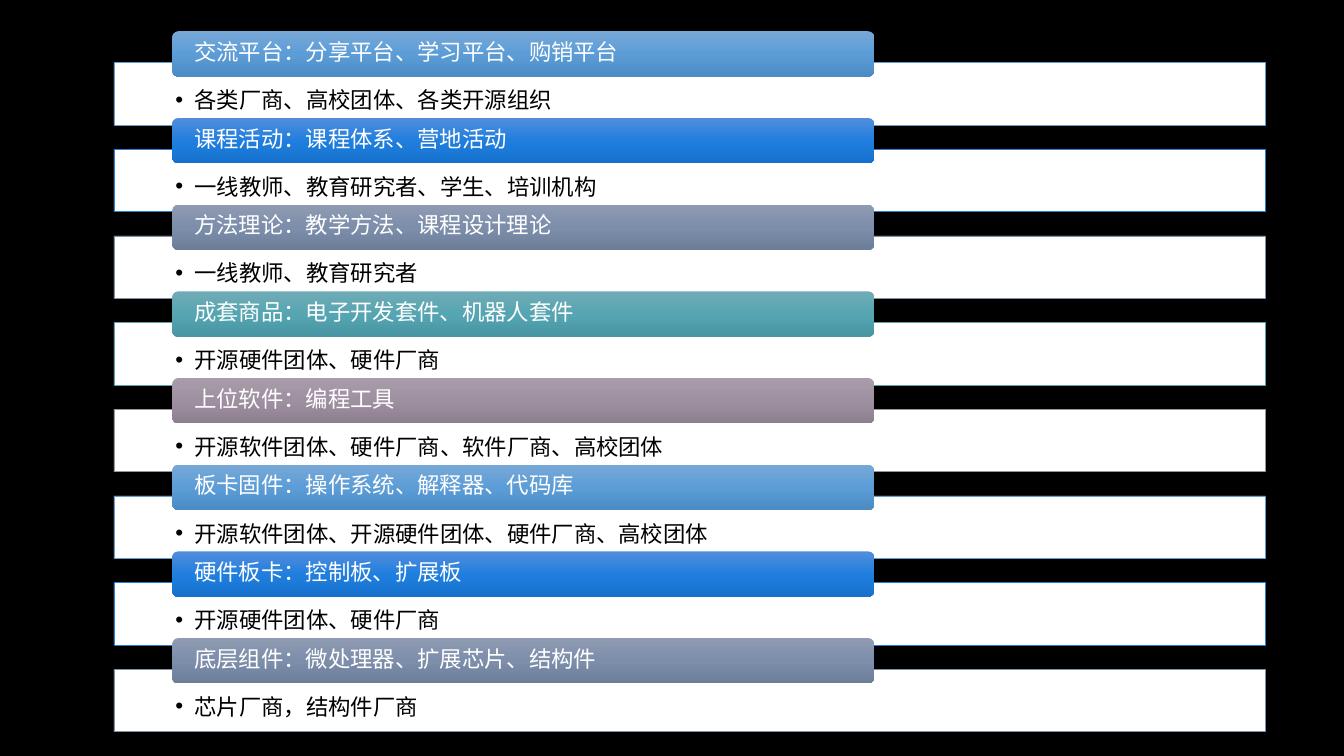
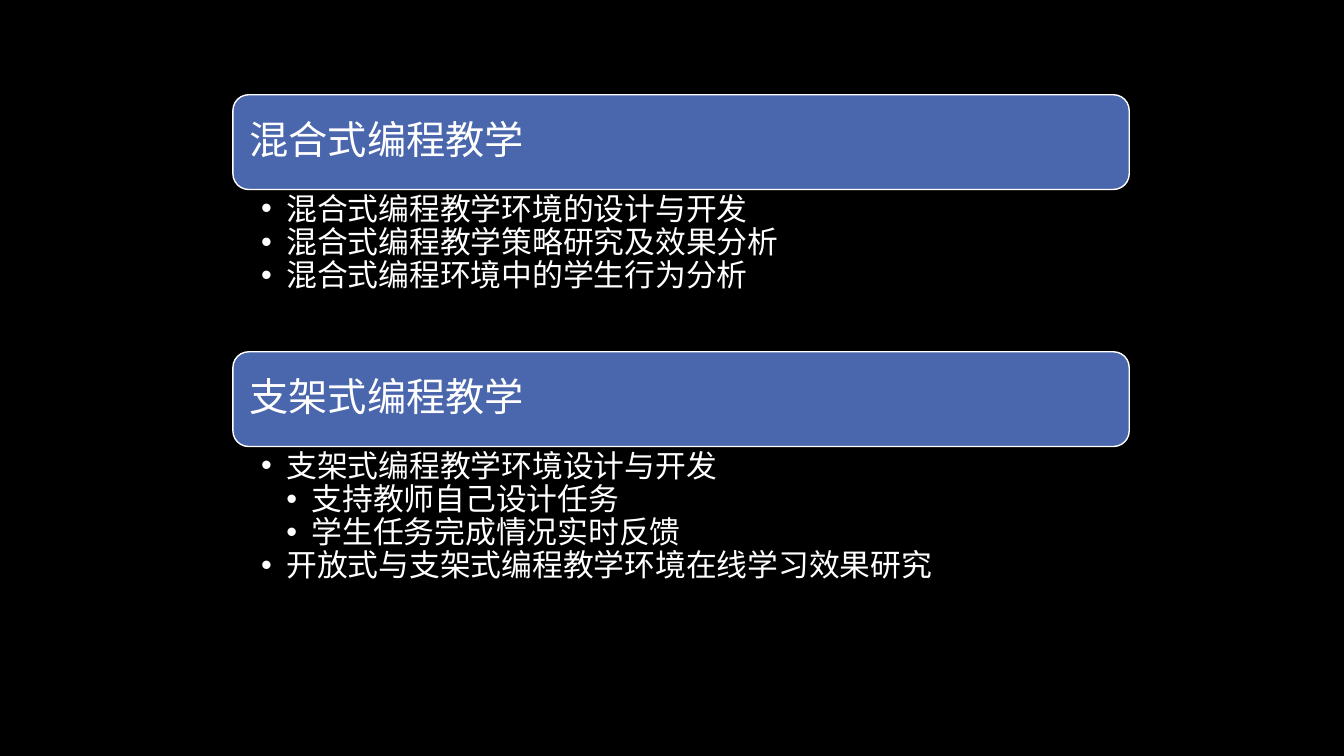
from copy import deepcopy
from lxml.etree import SubElement
from pptx import Presentation
from pptx.dml.color import RGBColor
from pptx.enum.shapes import MSO_SHAPE as Preset
from pptx.enum.text import MSO_ANCHOR as Anchor, PP_ALIGN as Align
from pptx.oxml.ns import qn
from pptx.util import Inches, Pt

# Content: (heading, participants) for each layer
LAYERS = [
    ("交流平台：分享平台、学习平台、购销平台", "各类厂商、高校团体、各类开源组织"),
    ("课程活动：课程体系、营地活动", "一线教师、教育研究者、学生、培训机构"),
    ("方法理论：教学方法、课程设计理论", "一线教师、教育研究者"),
    ("成套商品：电子开发套件、机器人套件", "开源硬件团体、硬件厂商"),
    ("上位软件：编程工具", "开源软件团体、硬件厂商、软件厂商、高校团体"),
    ("板卡固件：操作系统、解释器、代码库", "开源软件团体、开源硬件团体、硬件厂商、高校团体"),
    ("硬件板卡：控制板、扩展板", "开源硬件团体、硬件厂商"),
    ("底层组件：微处理器、扩展芯片、结构件", "芯片厂商，结构件厂商"),
]
# Content: heading, then (bullet level, text)
TOPICS = [
    ("混合式编程教学", [
        (1, "混合式编程教学环境的设计与开发"),
        (1, "混合式编程教学策略研究及效果分析"),
        (1, "混合式编程环境中的学生行为分析"),
    ]),
    ("支架式编程教学", [
        (1, "支架式编程教学环境设计与开发"),
        (2, "支持教师自己设计任务"),
        (2, "学生任务完成情况实时反馈"),
        (1, "开放式与支架式编程教学环境在线学习效果研究"),
    ]),
]

# Shared style
FONT = "Noto Sans CJK SC"
COLORS = {"background": "000000", "white": "FFFFFF", "black": "000000", "topic": "4A66AC"}
# Layer palette: outline, then gradient from top to bottom
PALETTE = [
    ("629DD1", ("77A8D7", "5C9DD7", "4C8CC5")),
    ("297FD5", ("538DDC", "207FDE", "1571CD")),
    ("7F8FA9", ("8E9BB2", "7D8EAB", "6D7E9A")),
    ("5AA2AE", ("70ACB7", "56A5B2", "4896A3")),
    ("9D90A0", ("A89CAA", "9E8FA1", "8D7E90")),
]


def rgb(value):
    return RGBColor.from_string(value)


def add_slide(presentation):
    slide = presentation.slides.add_slide(presentation.slide_layouts[6])
    slide.background.fill.solid()
    slide.background.fill.fore_color.rgb = rgb(COLORS["background"])
    return slide


def add_panel(slide, preset, box, fill=None, line=None, line_width=1):
    shape = slide.shapes.add_shape(preset, *map(Inches, box))
    shape.shadow.inherit = False
    if fill:
        shape.fill.solid()
        shape.fill.fore_color.rgb = rgb(fill)
    if line:
        shape.line.color.rgb = rgb(line)
        shape.line.width = Pt(line_width)
    else:
        shape.line.fill.background()
    return shape


def set_gradient(shape, colors):
    shape.fill.gradient()
    shape.fill.gradient_angle = 270
    stops = shape.fill._xPr.find(".//" + qn("a:gsLst"))
    stops.insert(1, deepcopy(stops[0]))
    for index, (stop, color) in enumerate(zip(shape.fill.gradient_stops, colors)):
        stop.color.rgb = rgb(color)
        stop.position = index / (len(colors) - 1)


def add_bullet(paragraph, level, indent):
    properties = paragraph._p.get_or_add_pPr()
    properties.set("marL", str(Inches(indent * level)))
    properties.set("indent", str(-Inches(indent)))
    SubElement(properties, qn("a:buFont"), typeface="Arial")
    SubElement(properties, qn("a:buChar"), char="•")


def write(shape, lines, size, color, insets, anchor, spacing, indent=0.25):
    """Fill a shape with (level, text) lines; level 0 has no bullet."""
    frame = shape.text_frame
    frame.word_wrap = True
    frame.vertical_anchor = anchor
    (frame.margin_left, frame.margin_top,
     frame.margin_right, frame.margin_bottom) = map(Inches, insets)
    for index, (level, text) in enumerate(lines):
        paragraph = frame.add_paragraph() if index else frame.paragraphs[0]
        paragraph.text = text
        if level:
            add_bullet(paragraph, level, indent)
        paragraph.alignment = Align.LEFT
        paragraph.line_spacing = spacing
        font = paragraph.font
        font.size, font.name = Pt(size), FONT
        font.color.rgb = rgb(color)
        SubElement(paragraph._p.pPr.find(qn("a:defRPr")), qn("a:ea"), typeface=FONT)


def build_layers(presentation):
    slide = add_slide(presentation)
    first_top, pitch, rise = 0.62, 0.86, 0.31
    for index, (heading, participants) in enumerate(LAYERS):
        outline, gradient = PALETTE[index % len(PALETTE)]
        top = first_top + index * pitch
        # White band with the participants
        band = add_panel(slide, Preset.RECTANGLE, (1.13, top, 11.42, 0.62),
                         COLORS["white"], outline, 0.5)
        write(band, [(1, participants)], 16, COLORS["black"],
              (0.61, 0.11, 0.61, 0.12), Anchor.BOTTOM, 0.8, indent=0.19)
        # Heading tab across the band's upper edge
        tab = add_panel(slide, Preset.ROUNDED_RECTANGLE, (1.71, top - rise, 6.96, 0.45))
        tab.adjustments[0] = 0.13
        set_gradient(tab, gradient)
        write(tab, [(0, heading)], 16, COLORS["white"],
              (0.2, 0, 0.2, 0), Anchor.MIDDLE, 0.8)


def build_topics(presentation):
    slide = add_slide(presentation)
    left, width, bar_height = 2.31, 8.89, 0.94
    first_top, pitch = 0.94, 2.55
    for index, (heading, bullets) in enumerate(TOPICS):
        top = first_top + index * pitch
        # Heading bar
        bar = add_panel(slide, Preset.ROUNDED_RECTANGLE, (left, top, width, bar_height),
                        COLORS["topic"], COLORS["white"])
        write(bar, [(0, heading)], 28, COLORS["white"], (0.12,) * 4, Anchor.MIDDLE, 0.9)
        # Bullets below the bar
        box = (left, top + bar_height, width, 0.55 * len(bullets))
        text_box = slide.shapes.add_textbox(*map(Inches, box))
        write(text_box, bullets, 22, COLORS["white"],
              (0.28, 0.04, 0.22, 0.04), Anchor.TOP, 0.9)


def main():
    presentation = Presentation()
    presentation.slide_width, presentation.slide_height = Inches(13.33), Inches(7.5)
    build_layers(presentation)
    build_topics(presentation)
    presentation.save("out.pptx")


if __name__ == "__main__":
    main()
